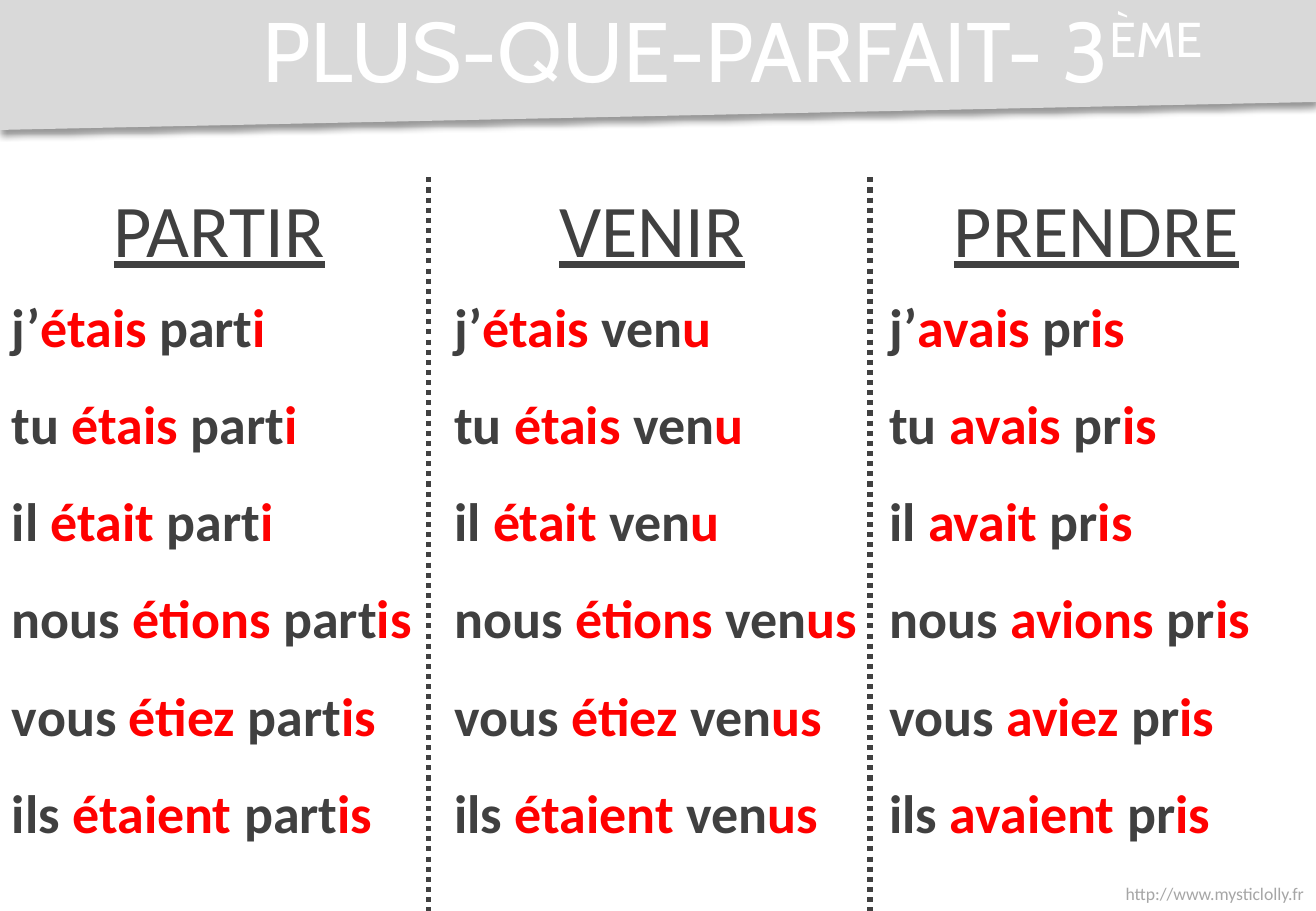
from lxml.etree import SubElement
from pptx import Presentation
from pptx.dml.color import RGBColor
from pptx.enum.dml import MSO_LINE
from pptx.enum.shapes import MSO_CONNECTOR
from pptx.enum.text import MSO_ANCHOR, PP_ALIGN
from pptx.oxml import parse_xml
from pptx.oxml.ns import nsdecls, qn
from pptx.util import Inches, Pt

WIDTH, HEIGHT = 10.83, 7.5
COLORS = {"banner": "D9D9D9", "title": "FFFFFF", "text": "404040",
          "ending": "FF0000", "footer": "A6A6A6"}
FORMATS = {
    "title": {"name": "Cabin", "size": Pt(50)},
    "heading": {"name": "Calibri", "size": Pt(44), "underline": True},
    "verb": {"name": "Calibri", "size": Pt(32), "bold": True},
    "footer": {"name": "Calibri", "size": Pt(10.5)},
}
PRONOUNS = ["j’", "tu ", "il ", "nous ", "vous ", "ils "]
ETRE = ["étais", "étais", "était", "étions", "étiez", "étaient"]
AVOIR = ["avais", "avais", "avait", "avions", "aviez", "avaient"]
# heading, heading left, list left, list width, auxiliary, stem, singular and plural endings
VERBS = [
    ("PARTIR", 0, 0, 3.61, ETRE, "part", "i", "is"),
    ("VENIR", 3.56, 3.64, 3.61, ETRE, "ven", "u", "us"),
    ("PRENDRE", 7.22, 7.22, 3.79, AVOIR, "pr", "is", "is"),
]
COLUMN_TOP = 1.46
DIVIDERS = [3.53, 7.16]


def color(name):
    return RGBColor.from_string(COLORS[name])


def add_run(paragraph, text, style, color_name):
    run = paragraph.add_run()
    run.text = text
    for attribute, value in FORMATS[style].items():
        setattr(run.font, attribute, value)
    run.font.color.rgb = color(color_name)
    return run


def add_text_frame(slide, left, top, width, height):
    box = slide.shapes.add_textbox(Inches(left), Inches(top), Inches(width), Inches(height))
    box.text_frame.word_wrap = True
    return box.text_frame


def add_line(slide, left, top, width, height, text, style, color_name, alignment):
    """Add a text box with one aligned paragraph and return its frame."""
    frame = add_text_frame(slide, left, top, width, height)
    paragraph = frame.paragraphs[0]
    paragraph.alignment = alignment
    add_run(paragraph, text, style, color_name)
    return frame


def add_banner(slide, width, right_height, left_height):
    builder = slide.shapes.build_freeform(0, 0)
    corners = [(width, 0), (width, right_height), (0, left_height)]
    builder.add_line_segments([(Inches(x), Inches(y)) for x, y in corners], close=True)
    banner = builder.convert_to_shape()
    banner.fill.solid()
    banner.fill.fore_color.rgb = color("banner")
    banner.line.fill.background()
    banner._element.spPr.append(parse_xml(
        f'<a:effectLst {nsdecls("a")}><a:outerShdw blurRad="{Pt(4)}" dist="{Pt(3)}" '
        'dir="5400000" rotWithShape="0"><a:srgbClr val="000000"><a:alpha val="40000"/>'
        '</a:srgbClr></a:outerShdw></a:effectLst>'))


def add_title(slide, left, top, width, height):
    frame = add_line(slide, left, top, width, height, "PLUS-QUE-PARFAIT- 3",
                     "title", "title", PP_ALIGN.CENTER)
    frame.vertical_anchor = MSO_ANCHOR.MIDDLE
    superscript = add_run(frame.paragraphs[0], "ÈME ", "title", "title")
    superscript._r.get_or_add_rPr().set("baseline", "30000")


def add_verb(slide, top, heading, heading_left, left, width, auxiliary, stem, singular, plural):
    """Add a heading and its conjugation, with the auxiliary and ending in red."""
    add_line(slide, heading_left, top, 3.61, 0.84, heading, "heading", "text", PP_ALIGN.CENTER)
    frame = add_text_frame(slide, left, top + 0.64, width, 4.95)
    for index, (pronoun, form) in enumerate(zip(PRONOUNS, auxiliary)):
        paragraph = frame.add_paragraph() if index else frame.paragraphs[0]
        paragraph.line_spacing = 1.5
        ending = singular if index < 3 else plural
        for text, color_name in [(pronoun, "text"), (form + " ", "ending"),
                                 (stem, "text"), (ending, "ending")]:
            add_run(paragraph, text, "verb", color_name)


def add_divider(slide, x, top, bottom):
    divider = slide.shapes.add_connector(
        MSO_CONNECTOR.STRAIGHT, Inches(x), Inches(top), Inches(x), Inches(bottom))
    divider.line.color.rgb = color("text")
    divider.line.width = Pt(3)
    divider.line.dash_style = MSO_LINE.ROUND_DOT
    SubElement(divider._element.spPr, qn("a:effectLst"))


def main():
    presentation = Presentation()
    presentation.slide_width = Inches(WIDTH)
    presentation.slide_height = Inches(HEIGHT)
    slide = presentation.slides.add_slide(presentation.slide_layouts[6])
    add_banner(slide, WIDTH, 0.84, 1.07)
    add_line(slide, 8.39, 7.22, 2.44, 0.28, "http://www.mysticlolly.fr",
             "footer", "footer", PP_ALIGN.RIGHT)
    for verb in VERBS:
        add_verb(slide, COLUMN_TOP, *verb)
    for x in DIVIDERS:
        add_divider(slide, x, COLUMN_TOP, HEIGHT)
    add_title(slide, 1.32, -0.02, 9.51, 0.85)
    presentation.save("out.pptx")


if __name__ == "__main__":
    main()
